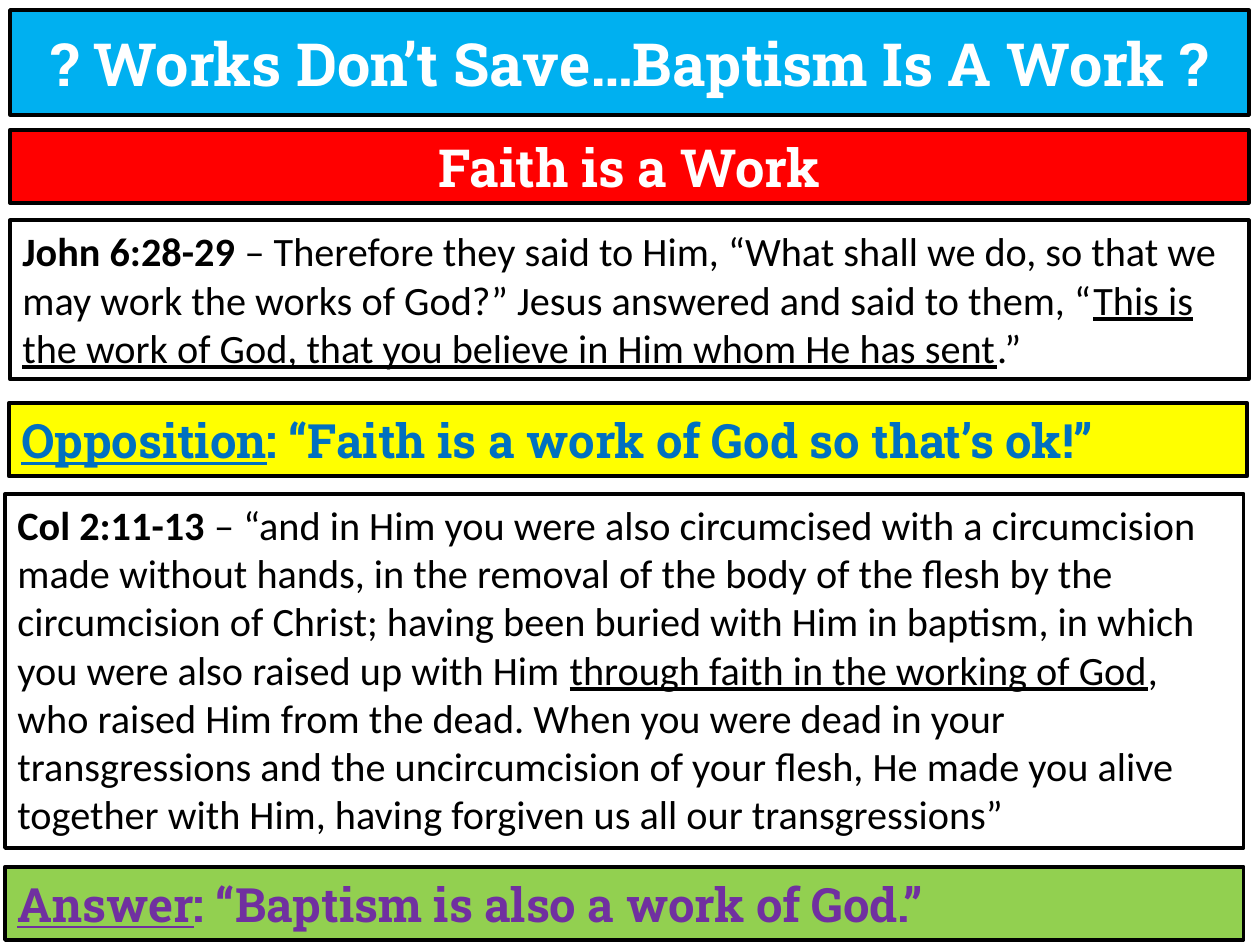
from dataclasses import dataclass

from pptx import Presentation
from pptx import util as u
from pptx.dml.color import RGBColor
from pptx.enum import shapes, text

SLIDE_WIDTH, SLIDE_HEIGHT = 10, 7.5
PANEL_WIDTH = 0.983  # share of the slide's width
BANNER_HEIGHT = 0.58 / SLIDE_HEIGHT


@dataclass(frozen=True)
class Theme:
    heading_font: str = "Roboto Slab"
    body_font: str = "Calibri"
    title_size: int = 34
    subtitle_size: int = 30
    banner_size: int = 27
    verse_size: int = 23
    outline_width: float = 2.25
    black: str = "000000"
    white: str = "FFFFFF"
    sky: str = "00B0F0"
    red: str = "FF0000"
    yellow: str = "FFFF00"
    blue: str = "0070C0"
    green: str = "92D050"
    purple: str = "7030A0"


THEME = Theme()


@dataclass(frozen=True)
class Words:
    content: str
    bold: bool = False
    underline: bool = False


@dataclass(frozen=True)
class Panel:
    left: float  # left, top and height are shares of the slide's size
    top: float
    height: float
    words: tuple[Words, ...]
    font: str
    size: int
    color: str
    fill: str | None = None
    centered: bool = False
    is_title: bool = False


def banner(left: float, top: float, words: tuple[Words, ...], size: int,
           color: str, fill: str, height: float = BANNER_HEIGHT,
           centered: bool = False, is_title: bool = False) -> Panel:
    return Panel(left, top, height, words, THEME.heading_font, size, color,
                 fill, centered, is_title)


def verse(left: float, top: float, height: float, *words: Words) -> Panel:
    return Panel(left, top, height, words, THEME.body_font,
                 THEME.verse_size, THEME.black)


def labelled(label: str, claim: str) -> tuple[Words, ...]:
    return Words(label, bold=True, underline=True), Words(claim, bold=True)


PANELS = (
    banner(0.008, 0.08 / SLIDE_HEIGHT,
           (Words("? Works Don’t Save…Baptism Is A Work ?", bold=True),),
           THEME.title_size, THEME.white, THEME.sky,
           height=0.83 / SLIDE_HEIGHT, centered=True, is_title=True),
    banner(0.008, 1.03 / SLIDE_HEIGHT, (Words("Faith is a Work", bold=True),),
           THEME.subtitle_size, THEME.white, THEME.red, centered=True),
    verse(0.008, 1.75 / SLIDE_HEIGHT, 1.26 / SLIDE_HEIGHT,
          Words("John 6:28-29", bold=True),
          Words(" – Therefore they said to Him, “What shall we do, so that we "
                "may work the works of God?” Jesus answered and said to them, “"),
          Words("This is the work of God, that you believe in Him whom "
                "He has sent", underline=True),
          Words(".”")),
    banner(0.007, 3.2 / SLIDE_HEIGHT,
           labelled("Opposition", ": “Faith is a work of God so that’s ok!”"),
           THEME.banner_size, THEME.blue, THEME.yellow),
    banner(0.004, 6.88 / SLIDE_HEIGHT,
           labelled("Answer", ": “Baptism is also a work of God.”"),
           THEME.banner_size, THEME.purple, THEME.green),
    verse(0.004, 3.92 / SLIDE_HEIGHT, 2.81 / SLIDE_HEIGHT,
          Words("Col 2:11-13", bold=True),
          Words(" – “and in Him you were also circumcised with a circumcision "
                "made without hands, in the removal of the body of the flesh by "
                "the circumcision of Christ; having been buried with Him in "
                "baptism, in which you were also raised up with Him "),
          Words("through faith in the working of God", underline=True),
          Words(", who raised Him from the dead. When you were dead in your "
                "transgressions and the uncircumcision of your flesh, He made "
                "you alive together with Him, having forgiven us all our "
                "transgressions”")),
)


def add_panel(slide, panel: Panel) -> None:
    # Outlined box
    box = (u.Inches(panel.left * SLIDE_WIDTH),
           u.Inches(panel.top * SLIDE_HEIGHT),
           u.Inches(PANEL_WIDTH * SLIDE_WIDTH),
           u.Inches(panel.height * SLIDE_HEIGHT))
    if panel.is_title:
        shape = slide.shapes.title
        shape.left, shape.top, shape.width, shape.height = box
    elif panel.fill:
        shape = slide.shapes.add_shape(shapes.MSO_SHAPE.RECTANGLE, *box)
        shape.shadow.inherit = False
    else:
        shape = slide.shapes.add_textbox(*box)
    if panel.fill:
        shape.fill.solid()
        shape.fill.fore_color.rgb = RGBColor.from_string(panel.fill)
    shape.line.color.rgb = RGBColor.from_string(THEME.black)
    shape.line.width = u.Pt(THEME.outline_width)

    # Text layout
    frame = shape.text_frame
    frame.word_wrap = True
    frame.auto_size = (text.MSO_AUTO_SIZE.NONE if panel.fill
                       else text.MSO_AUTO_SIZE.SHAPE_TO_FIT_TEXT)
    frame.vertical_anchor = (text.MSO_ANCHOR.MIDDLE if panel.fill
                             else text.MSO_ANCHOR.TOP)
    paragraph = frame.paragraphs[0]
    paragraph.alignment = (text.PP_ALIGN.CENTER if panel.centered
                           else text.PP_ALIGN.LEFT)

    # Runs
    for words in panel.words:
        run = paragraph.add_run()
        run.text = words.content
        font = run.font
        font.name = panel.font
        font.size = u.Pt(panel.size)
        font.bold = words.bold
        font.underline = words.underline
        font.color.rgb = RGBColor.from_string(panel.color)


def main() -> None:
    presentation = Presentation()
    presentation.slide_width = u.Inches(SLIDE_WIDTH)
    presentation.slide_height = u.Inches(SLIDE_HEIGHT)
    title_only = presentation.slide_layouts.get_by_name("Title Only")
    slide = presentation.slides.add_slide(title_only)
    for panel in PANELS:
        add_panel(slide, panel)
    presentation.save("out.pptx")


if __name__ == "__main__":
    main()
